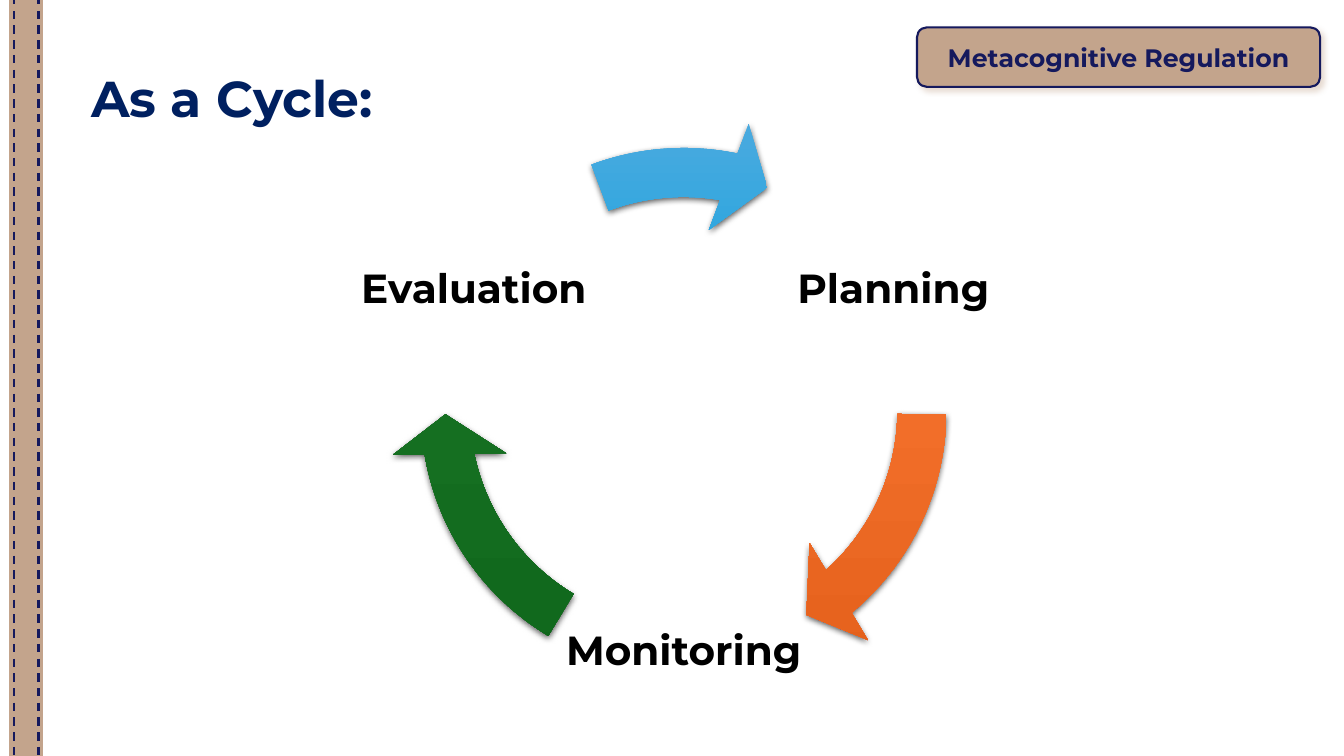
from lxml import etree
from pptx import Presentation
from pptx import util as u
from pptx.dml.color import RGBColor
from pptx.enum import dml, shapes, text
from pptx.oxml import ns

COLORS = {
    "tan": "C3A48C", "navy": "15195D", "title": "002060", "black": "000000",
    "orange": ["ED8257", "F26E29", "E25F1A"],
    "green": ["4D7E50", "156F21", "0F661B"],
    "blue": ["4CAADF", "05A2DF", "0092CB"],
}


def write_text(shape, content, size, color, align=text.PP_ALIGN.CENTER,
               anchor=text.MSO_ANCHOR.MIDDLE, spacing=0.9, margin=None):
    frame = shape.text_frame
    frame.word_wrap = True
    frame.vertical_anchor = anchor
    if margin is not None:
        frame.margin_left = frame.margin_right = margin
        frame.margin_top = frame.margin_bottom = margin
    paragraph = frame.paragraphs[0]
    paragraph.text = content
    paragraph.alignment = align
    paragraph.line_spacing = spacing
    font = paragraph.runs[0].font
    font.name = "Montserrat"
    font.size = u.Pt(size)
    font.bold = True
    font.color.rgb = RGBColor.from_string(COLORS[color])


def add_shadow(shape, color, opacity, blur, distance, angle):
    shape.shadow.inherit = False
    effects = shape._element.spPr.find(ns.qn("a:effectLst"))
    shadow = etree.SubElement(
        effects, ns.qn("a:outerShdw"), blurRad=str(u.Pt(blur)),
        dist=str(u.Pt(distance)), dir=str(angle * 60000), rotWithShape="0")
    tint = etree.SubElement(shadow, ns.qn("a:srgbClr"), val=COLORS[color])
    etree.SubElement(tint, ns.qn("a:alpha"), val=str(opacity * 1000))


presentation = Presentation()
presentation.slide_width = u.Cm(33.87)
presentation.slide_height = u.Cm(19.05)
slide = presentation.slides.add_slide(presentation.slide_layouts[6])

band = slide.shapes.add_shape(
    shapes.MSO_SHAPE.RECTANGLE, u.Cm(0.25), u.Cm(-0.02), u.Cm(0.82), u.Cm(19.08))
band.shadow.inherit = False
band.fill.solid()
band.fill.fore_color.rgb = RGBColor.from_string(COLORS["tan"])
band.line.color.rgb = RGBColor.from_string(COLORS["tan"])
band.line.width = u.Pt(0.75)

for x in (0.36, 0.97):
    stitch = slide.shapes.add_connector(
        shapes.MSO_CONNECTOR.STRAIGHT, u.Cm(x), u.Cm(-0.1), u.Cm(x), u.Cm(19.13))
    stitch.line.color.rgb = RGBColor.from_string(COLORS["navy"])
    stitch.line.width = u.Pt(1.5)
    stitch.line.dash_style = dml.MSO_LINE.DASH
    etree.SubElement(stitch._element.spPr, ns.qn("a:effectLst"))

title = slide.shapes.add_textbox(u.Cm(2.06), u.Cm(1.73), u.Cm(21.06), u.Cm(2.06))
write_text(title, "As a Cycle:", size=36, color="title",
           align=text.PP_ALIGN.LEFT, anchor=text.MSO_ANCHOR.TOP)

stages = [
    ("Planning", 19.38, 4.17, "orange", 29.627, 0.525),
    ("Monitoring", 14.1, 13.31, "green", 101.712, 72.609),
    ("Evaluation", 8.81, 4.17, "blue", 168.557, 149.68),
]
for name, left, top, color, end, start in stages:
    label = slide.shapes.add_textbox(u.Cm(left), u.Cm(top), u.Cm(6.27), u.Cm(6.27))
    write_text(label, name, size=29, color="black", margin=u.Cm(0.1))

    arrow = slide.shapes.add_shape(
        shapes.MSO_SHAPE.CIRCULAR_ARROW, u.Cm(9.8), u.Cm(2.92), u.Cm(14.86), u.Cm(14.86))
    for index, value in enumerate((0.083, 5.764, end, start, 0.096)):
        arrow.adjustments[index] = value
    arrow.fill.gradient()
    arrow.fill.gradient_angle = 270
    stops = arrow._element.spPr.find(ns.qn("a:gradFill")).find(ns.qn("a:gsLst"))
    for stop in list(stops):
        stops.remove(stop)
    for index, shade in enumerate(COLORS[color]):
        stop = etree.SubElement(stops, ns.qn("a:gs"), pos=str(index * 50000))
        etree.SubElement(stop, ns.qn("a:srgbClr"), val=shade)
    arrow.line.fill.background()
    add_shadow(arrow, "black", opacity=63, blur=4.5, distance=1.5, angle=90)

badge = slide.shapes.add_shape(
    shapes.MSO_SHAPE.ROUNDED_RECTANGLE, u.Cm(23.11), u.Cm(0.69), u.Cm(10.16), u.Cm(1.5))
badge.fill.solid()
badge.fill.fore_color.rgb = RGBColor.from_string(COLORS["tan"])
badge.line.color.rgb = RGBColor.from_string(COLORS["navy"])
badge.line.width = u.Pt(1.5)
add_shadow(badge, "tan", opacity=40, blur=4, distance=3, angle=45)
write_text(badge, "Metacognitive Regulation", size=18, color="navy", spacing=1.0)

presentation.save("out.pptx")
